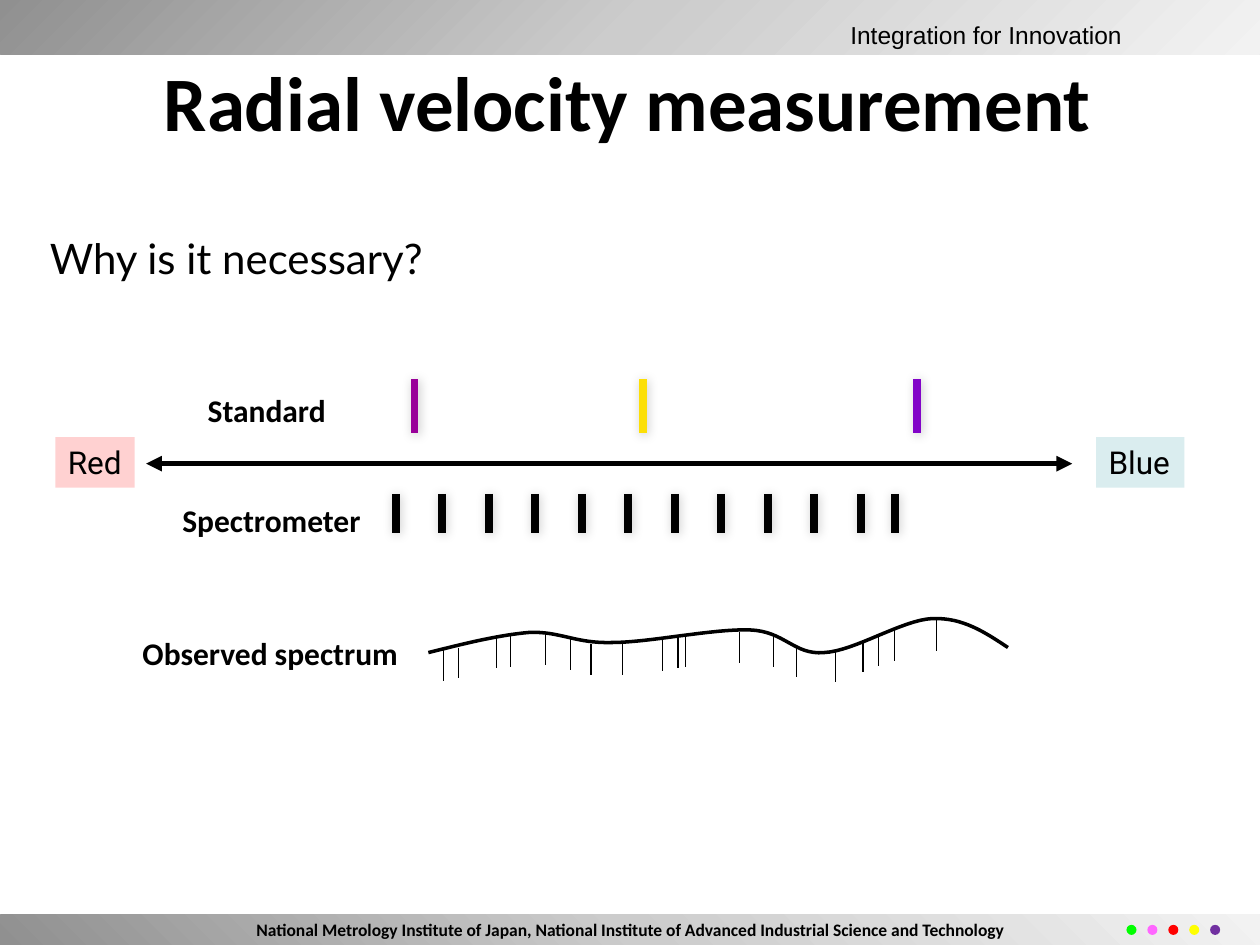
from lxml import etree
from pptx import Presentation
from pptx import util as u
from pptx.dml.color import RGBColor
from pptx.enum import shapes as s, text as t
from pptx.oxml.ns import nsdecls, qn
from pptx.oxml import parse_xml

BLACK = RGBColor(0, 0, 0)
PINK = RGBColor(0xFF, 0xD1, 0xD1)
PALE_BLUE = RGBColor(0xDA, 0xED, 0xEF)
STANDARD_COLOURS = [RGBColor(0x99, 0x00, 0x99), RGBColor(0xFC, 0xDF, 0x06),
                    RGBColor(0x82, 0x04, 0xC8)]
DOT_COLOURS = [RGBColor(0x00, 0xFF, 0x00), RGBColor(0xFF, 0x66, 0xFF),
               RGBColor(0xFF, 0x00, 0x00), RGBColor(0xFF, 0xFF, 0x00),
               RGBColor(0x70, 0x30, 0xA0)]
BAND_STOPS = [(0, "909090"), (50, "CCCCCC"), (100, "F2F2F2")]

# The slide is a grid of 100 columns by 75 rows
prs = Presentation()
prs.slide_width, prs.slide_height = u.Inches(10), u.Inches(7.5)
COL, ROW = prs.slide_width / 100, prs.slide_height / 75
slide = prs.slides.add_slide(prs.slide_layouts[5])
canvas = slide.shapes


def write(words, box=None, shape=None, font="Calibri", size=18, bold=True,
          align=t.PP_ALIGN.CENTER, anchor=t.MSO_ANCHOR.MIDDLE, wrap=True,
          spacing=None):
    """Put words in a shape, or in a new text box placed on the grid."""
    if box:
        place = [round(n * unit) for n, unit in zip(box, (COL, ROW, COL, ROW))]
        if shape is None:
            shape = canvas.add_textbox(*place)
        else:
            shape.left, shape.top, shape.width, shape.height = place
    frame = shape.text_frame
    frame.text = words
    frame.word_wrap = wrap
    frame.auto_size = t.MSO_AUTO_SIZE.NONE if wrap else t.MSO_AUTO_SIZE.SHAPE_TO_FIT_TEXT
    frame.vertical_anchor = anchor
    paragraph = frame.paragraphs[0]
    paragraph.alignment = align
    if spacing:
        paragraph.line_spacing = spacing
    paragraph.font.name, paragraph.font.size = font, u.Pt(size)
    paragraph.font.bold = bold
    paragraph.font.color.rgb = BLACK
    return shape


def rule(x1, y1, x2, y2, width, colour=BLACK, shadow=False, arrows=False):
    """Draw a straight line between two grid points."""
    line = canvas.add_connector(s.MSO_CONNECTOR.STRAIGHT, round(x1 * COL),
                                round(y1 * ROW), round(x2 * COL), round(y2 * ROW))
    line.line.width = u.Pt(width)
    line.line.color.rgb = colour
    props = line._element.spPr
    if arrows:
        for end in ("a:headEnd", "a:tailEnd"):
            etree.SubElement(props.find(qn("a:ln")), qn(end), type="triangle")
    effects = etree.SubElement(props, qn("a:effectLst"))
    if shadow:
        effects.append(parse_xml(
            f'<a:outerShdw {nsdecls("a")} blurRad="{u.Pt(6)}" dist="{u.Pt(1)}" '
            'dir="2700000" algn="tl" rotWithShape="0"><a:srgbClr val="000000">'
            '<a:alpha val="20000"/></a:srgbClr></a:outerShdw>'))


# Header and footer bands
bands = []
for top, height, angle in [(-0.1, 4.4, 45), (72.6, 2.4, 315)]:
    band = canvas.add_shape(s.MSO_SHAPE.RECTANGLE, 0, round(top * ROW),
                            prs.slide_width, round(height * ROW))
    band.shadow.inherit = False
    band.line.fill.background()
    stops = "".join(f'<a:gs pos="{pos * 1000}"><a:srgbClr val="{grey}"/></a:gs>'
                    for pos, grey in BAND_STOPS)
    band._element.spPr.find(qn("a:prstGeom")).addnext(parse_xml(
        f'<a:gradFill {nsdecls("a")} rotWithShape="1"><a:gsLst>{stops}</a:gsLst>'
        f'<a:lin ang="{angle * 60000}" scaled="0"/></a:gradFill>'))
    bands.append(band)
write("Integration for Innovation", (66.5, 1.1, 25, 3.4), font="Arial", size=14,
      bold=False, align=t.PP_ALIGN.LEFT, anchor=t.MSO_ANCHOR.TOP, wrap=False)
write("National Metrology Institute of Japan, National Institute of Advanced "
      "Industrial Science and Technology", shape=bands[1], size=10)

# Footer dots
for i, colour in enumerate(DOT_COLOURS):
    dot = canvas.add_shape(s.MSO_SHAPE.OVAL, round((89.4 + 1.66 * i) * COL),
                           round(73.4 * ROW), round(0.8 * COL), round(0.8 * ROW))
    dot.shadow.inherit = False
    dot.fill.solid()
    dot.fill.fore_color.rgb = colour
    dot.line.fill.background()

# Heading and question
write("Radial velocity measurement", (1.7, 4.4, 96.3, 7.1), size=44)
write("Why is it necessary?", (1, 16.9, 35.5, 7.1), shape=canvas.title,
      font="Lato", size=24, bold=False)

# Wavelength axis from red to blue
for name, left, width, colour in [("Red", 4.4, 6.3, PINK), ("Blue", 87, 7, PALE_BLUE)]:
    end_label = write(name, (left, 34.7, width, 4), font="Roboto", bold=False,
                      align=t.PP_ALIGN.LEFT, anchor=t.MSO_ANCHOR.TOP, wrap=False)
    end_label.fill.solid()
    end_label.fill.fore_color.rgb = colour
rule(11.6, 36.8, 85.1, 36.8, 3, arrows=True)

# Standard lines above the axis, spectrometer marks below it
for x, colour in zip((32.9, 51, 72.8), STANDARD_COLOURS):
    rule(x, 30.1, x, 34.4, 4.5, colour, shadow=True)
for x in [31.4 + 3.69 * i for i in range(11)] + [71]:
    rule(x, 39.2, x, 42.3, 4.5, shadow=True)

# Row labels
write("Standard", (15.5, 30.5, 12.4, 4.4), align=t.PP_ALIGN.LEFT, spacing=0.9)
write("Spectrometer", (8.3, 38.6, 26.5, 5.3))
write("Observed spectrum", (8.2, 49.2, 26.5, 5.3))

# Observed spectrum: Bezier pieces, each as two controls and an end
start = (34, 51.8)
pieces = [((36.8, 51.1), (39.6, 50.4), (42, 50.2)),
          ((44.5, 50.1), (45.7, 51.1), (48.6, 51)),
          ((51.5, 51), (56.6, 49.9), (59.5, 50)),
          ((62.3, 50.1), (63, 52), (65.4, 51.8)),
          ((67.8, 51.7), (71.6, 49.2), (74, 49.1)),
          ((76.4, 49), (78.2, 50.2), (80, 51.4))]
STEPS = 16
curve = []
pen = start
for c1, c2, end in pieces:
    for k in range(1, STEPS + 1):
        f = k / STEPS
        g = 1 - f
        curve.append([(g**3 * p + 3 * g * g * f * q + 3 * g * f * f * r + f**3 * e) * unit
                      for p, q, r, e, unit in zip(pen, c1, c2, end, (COL, ROW))])
    pen = end
outline = canvas.build_freeform(start[0] * COL, start[1] * ROW)
outline.add_line_segments(curve, close=False)
spectrum = outline.convert_to_shape()
spectrum.shadow.inherit = False
spectrum.fill.background()
spectrum.line.color.rgb = BLACK
spectrum.line.width = u.Pt(2)

# Absorption lines hanging from the spectrum
absorption = [(35.2, 51.6), (36.4, 51.4), (39.4, 50.6), (40.5, 50.5), (43.3, 50.3),
              (45.3, 50.7), (46.9, 51.1), (49.4, 51.1), (52.6, 50.8), (53.8, 50.6),
              (54.4, 50.5), (58.7, 50.2), (61.4, 50.5), (63.2, 51.3), (66.3, 51.7),
              (68.5, 50.9), (69.7, 50.4), (71, 50), (74.3, 49.2)]
for x, top in absorption:
    rule(x, top, x, top + 2.45, 0.75)

prs.save("out.pptx")
